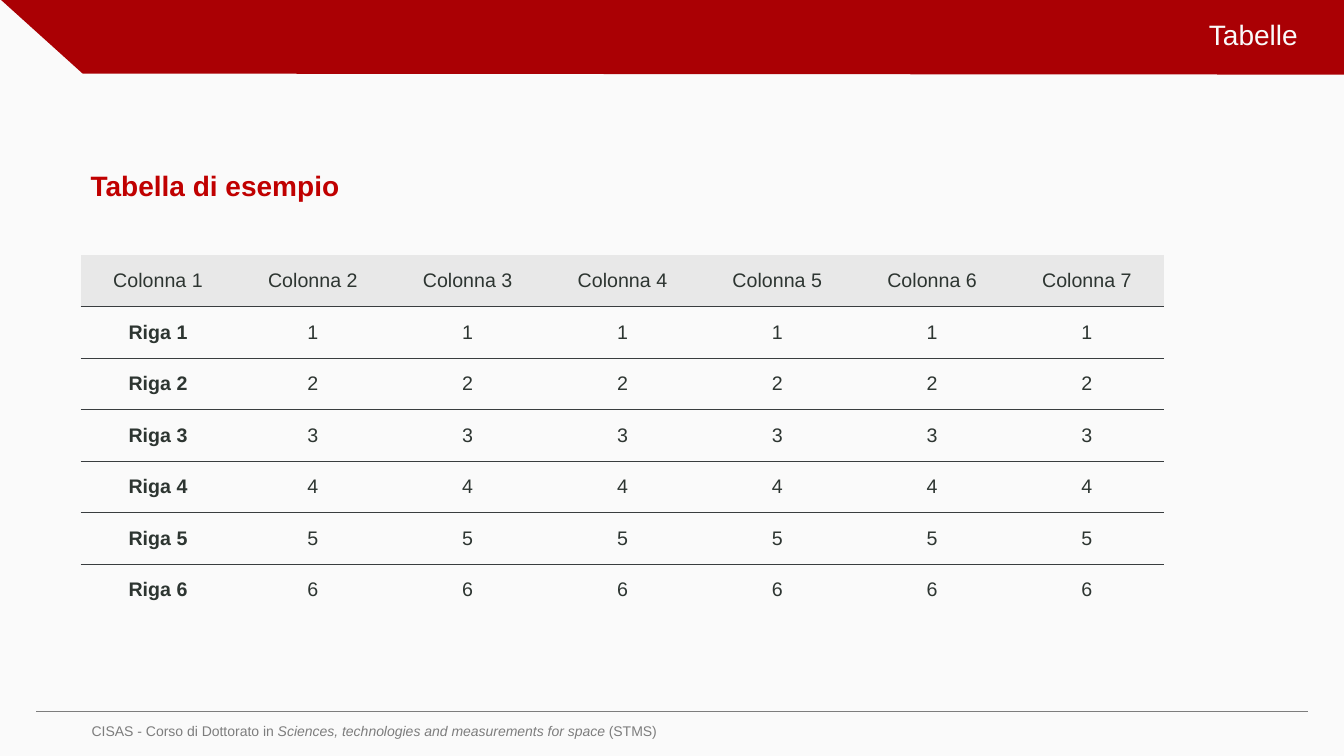
from dataclasses import dataclass

from lxml.etree import SubElement
from pptx import Presentation
from pptx.dml.color import RGBColor
from pptx.enum.shapes import MSO_CONNECTOR
from pptx.enum.text import MSO_ANCHOR as Anchor, PP_ALIGN as Align
from pptx.oxml.ns import qn
from pptx.util import Inches, Pt


@dataclass(frozen=True)
class Theme:
    font: str = "Arial"
    paper: str = "FAFAFA"
    banner: str = "AA0004"
    accent: str = "C00000"
    ink: str = "2D3531"
    muted: str = "7D7D7D"
    header_fill: str = "E8E8E8"
    rule: str = "393D3F"
    heading_size: int = 20
    cell_size: int = 14
    footer_size: int = 10
    border_width: float = 0.5


THEME = Theme()
COLUMNS = ROWS = range(1, 7)


def color(code):
    return RGBColor.from_string(code)


def write(frame, *spans, size, ink, align=Align.LEFT, anchor=Anchor.TOP,
          spacing=None, bold=False):
    """Fill the frame with one paragraph; each span is (text, italic)."""
    frame.word_wrap = True
    frame.vertical_anchor = anchor
    para = frame.paragraphs[0]
    para.alignment = align
    if spacing:
        para.line_spacing = spacing
    for text, italic in spans:
        span = para.add_run()
        span.text = text
        span.font.name = THEME.font
        span.font.size = Pt(size)
        span.font.bold = bold
        span.font.italic = italic
        span.font.color.rgb = color(ink)


def add_text(page, box, *spans, inset=0.1, **style):
    frame = page.shapes.add_textbox(*map(Inches, box)).text_frame
    frame.margin_left = Inches(inset)
    write(frame, *spans, **style)


def add_banner(page, box, title):
    left, top, width, height = box
    right, bottom = left + width, top + height
    builder = page.shapes.build_freeform(Inches(left), Inches(top), scale=1.0)
    corners = [(right, top), (right, bottom), (left + 0.82, bottom - 0.01)]
    builder.add_line_segments([(Inches(x), Inches(y)) for x, y in corners])
    band = builder.convert_to_shape()
    band.shadow.inherit = False
    band.fill.solid()
    band.fill.fore_color.rgb = color(THEME.banner)
    band.line.fill.background()
    add_text(page, (left + 5.12, top + 0.01, 7.85, 0.73), (title, False),
             size=THEME.heading_size, ink=THEME.paper, align=Align.RIGHT,
             anchor=Anchor.MIDDLE, spacing=0.9)


def set_borders(cell, above, below):
    """Draw only the requested horizontal rules of a cell."""
    properties = cell._tc.get_or_add_tcPr()
    sides = {"a:lnL": False, "a:lnR": False, "a:lnT": above, "a:lnB": below}
    for position, (tag, drawn) in enumerate(sides.items()):
        line = SubElement(properties, qn(tag), w=str(Pt(THEME.border_width)))
        properties.insert(position, line)
        if drawn:
            fill = SubElement(line, qn("a:solidFill"))
            SubElement(fill, qn("a:srgbClr"), val=THEME.rule)
        else:
            SubElement(line, qn("a:noFill"))


def add_ruled_table(page, box, rows):
    left, top, width, height = map(Inches, box)
    table = page.shapes.add_table(len(rows), len(rows[0]), left, top, width, height).table
    table.first_row = table.horz_banding = False
    last = len(rows) - 1
    for row_index, values in enumerate(rows):
        for column_index, value in enumerate(values):
            cell = table.cell(row_index, column_index)
            is_header = row_index == 0
            write(cell.text_frame, (value, False), size=THEME.cell_size,
                  ink=THEME.ink, align=Align.CENTER,
                  bold=column_index == 0 and not is_header)
            cell.vertical_anchor = Anchor.MIDDLE
            if is_header:
                cell.fill.solid()
                cell.fill.fore_color.rgb = color(THEME.header_fill)
            else:
                cell.fill.background()
            set_borders(cell, above=not is_header, below=row_index < last)


def add_footer(page, box, *spans):
    left, top, width, height = box
    rule_y = Inches(top - 0.03)
    rule = page.shapes.add_connector(MSO_CONNECTOR.STRAIGHT, Inches(left + 0.36),
                                     rule_y, Inches(left + 12.97), rule_y)
    rule.line.color.rgb = color(THEME.muted)
    rule.line.width = Pt(0.75)
    SubElement(rule._element.spPr, qn("a:effectLst"))
    add_text(page, box, *spans, inset=0.91, size=THEME.footer_size,
             ink=THEME.muted, spacing=1.2)


def add_table_slide(deck):
    page = deck.slides.add_slide(deck.slide_layouts[6])
    page.background.fill.solid()
    page.background.fill.fore_color.rgb = color(THEME.paper)
    add_banner(page, (0, -0.01, 13.38, 0.75), "Tabelle")
    add_text(page, (0.8, 1.56, 11.73, 0.53), ("Tabella di esempio", False),
             size=THEME.heading_size, ink=THEME.accent, spacing=1.2, bold=True)
    header = [f"Colonna {number}" for number in range(1, len(COLUMNS) + 2)]
    body = [[f"Riga {row}"] + [str(row) for _ in COLUMNS] for row in ROWS]
    add_ruled_table(page, (0.8, 2.53, 10.75, 3.58), [header] + body)
    add_footer(page, (0, 7.09, 12.53, 0.41),
               ("CISAS - Corso di Dottorato in ", False),
               ("Sciences, technologies and measurements for space ", True),
               ("(STMS)", False))


def main():
    deck = Presentation()
    deck.slide_width, deck.slide_height = Inches(13.33), Inches(7.5)
    add_table_slide(deck)
    deck.save("out.pptx")


if __name__ == "__main__":
    main()
